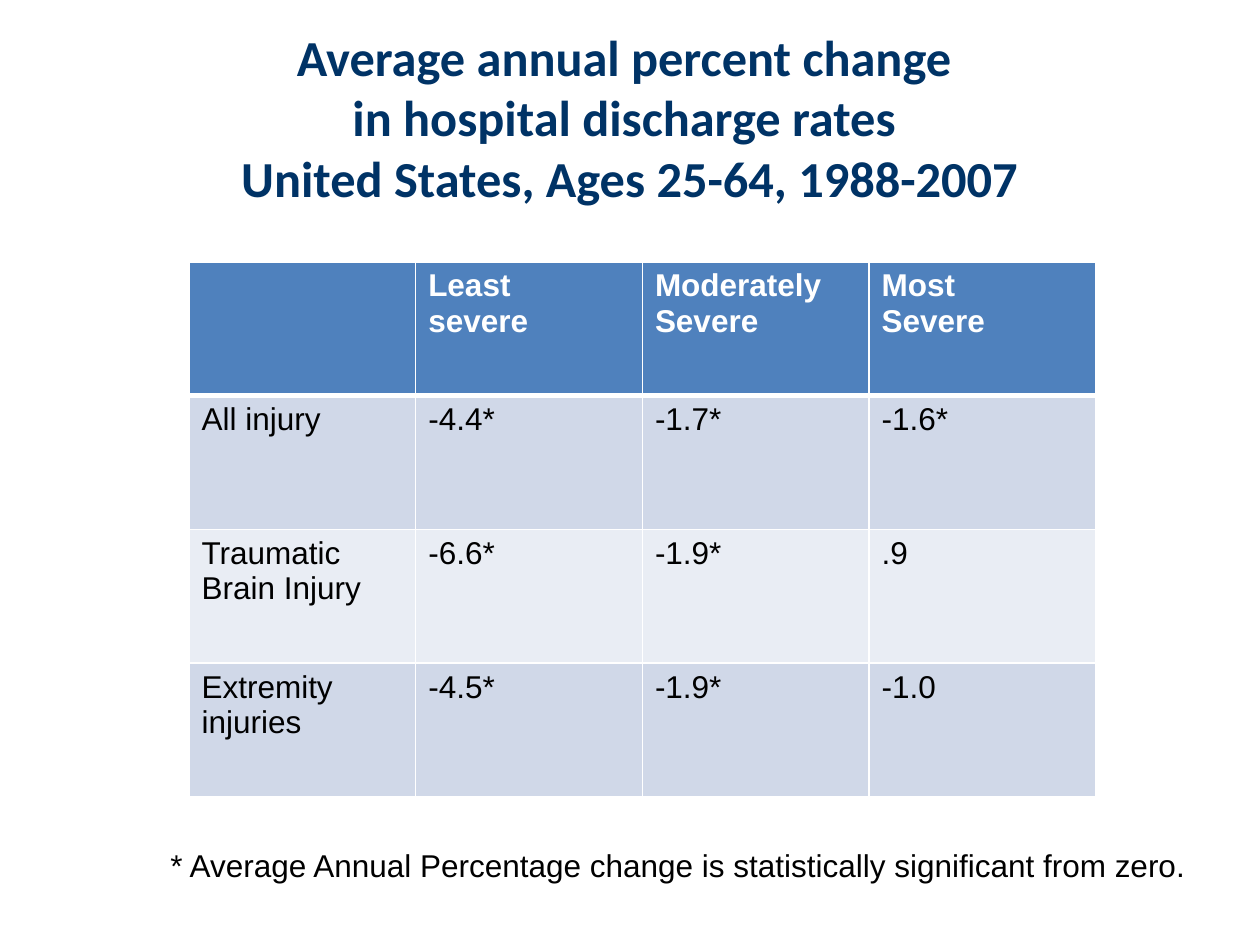
"""Build the slide on average annual change in hospital discharge rates."""
from lxml import etree
from pptx import Presentation
from pptx import util as u
from pptx.dml.color import RGBColor
from pptx.enum import text
from pptx.oxml import ns

NAVY = RGBColor(0x00, 0x33, 0x66)
BLUE = RGBColor(0x4F, 0x81, 0xBD)
BAND_DARK = RGBColor(0xD0, 0xD8, 0xE8)
BAND_LIGHT = RGBColor(0xE9, 0xED, 0xF4)
WHITE = RGBColor(0xFF, 0xFF, 0xFF)
BLACK = RGBColor(0x00, 0x00, 0x00)

TITLE_LINES = [
    "Average annual percent change ",
    "in hospital discharge rates ",
    "United States, Ages 25-64, 1988-2007",
]
ROWS = [
    ["", "Least\nsevere", "Moderately\nSevere", "Most\nSevere"],
    ["All injury", "-4.4*", "-1.7*", "-1.6*"],
    ["Traumatic Brain Injury", "-6.6*", "-1.9*", ".9"],
    ["Extremity injuries", "-4.5*", "-1.9*", "-1.0"],
]
ROW_FILLS = [BLUE, BAND_DARK, BAND_LIGHT, BAND_DARK]
FOOTNOTE = "* Average Annual Percentage change is statistically significant from zero."


def px(*lengths):
    return [u.Emu(round(length * 914400 / 126)) for length in lengths]


def add_run(paragraph, wording, font_name, size, color, bold=False):
    run = paragraph.add_run()
    run.text = wording
    run.font.name = font_name
    run.font.size = u.Pt(size)
    run.font.bold = bold
    run.font.color.rgb = color


presentation = Presentation()
presentation.slide_width, presentation.slide_height = px(1260, 945)
slide = presentation.slides.add_slide(presentation.slide_layouts[5])

title = slide.shapes.title
title.left, title.top, title.width, title.height = px(63, 38, 1134, 157)
title.text_frame.vertical_anchor = text.MSO_ANCHOR.MIDDLE
paragraph = title.text_frame.paragraphs[0]
paragraph.alignment = text.PP_ALIGN.CENTER
for index, line in enumerate(TITLE_LINES):
    if index:
        paragraph.add_line_break()
    add_run(paragraph, line, "Calibri", 28.8, NAVY, bold=True)

table = slide.shapes.add_table(len(ROWS), len(ROWS[0]), *px(189, 262, 907, 535)).table
for row_index, (row, fill) in enumerate(zip(ROWS, ROW_FILLS)):
    is_header = row_index == 0
    for column_index, wording in enumerate(row):
        cell = table.cell(row_index, column_index)
        properties = cell._tc.get_or_add_tcPr()
        for side in "LRTB":
            thick = (is_header and side == "B") or (row_index == 1 and side == "T")
            border = etree.SubElement(properties, ns.qn(f"a:ln{side}"))
            border.set("w", str(u.Pt(3 if thick else 1)))
            solid = etree.SubElement(border, ns.qn("a:solidFill"))
            etree.SubElement(solid, ns.qn("a:srgbClr")).set("val", str(WHITE))
        cell.fill.solid()
        cell.fill.fore_color.rgb = fill
        if not wording:
            continue
        for line_index, line in enumerate(wording.split("\n")):
            frame = cell.text_frame
            paragraph = frame.add_paragraph() if line_index else frame.paragraphs[0]
            add_run(paragraph, line, "Arial", 18, WHITE if is_header else BLACK, is_header)

footnote = slide.shapes.add_textbox(*px(158, 840, 1050, 53))
footnote.text_frame.word_wrap = True
footnote.text_frame.auto_size = text.MSO_AUTO_SIZE.SHAPE_TO_FIT_TEXT
add_run(footnote.text_frame.paragraphs[0], FOOTNOTE, "Arial", 18, BLACK)

presentation.save("out.pptx")
